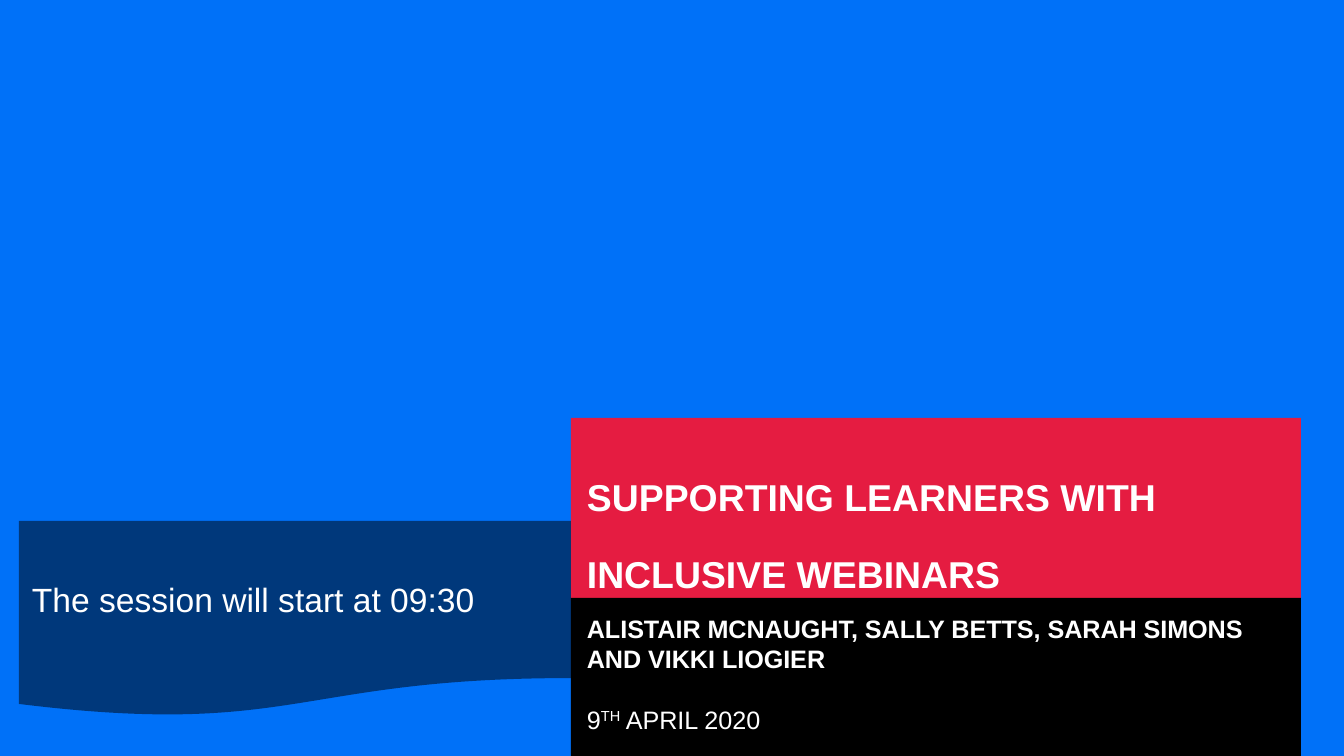
from lxml import etree
from pptx import Presentation
from pptx.dml.color import RGBColor
from pptx.enum.shapes import MSO_SHAPE
from pptx.enum.text import MSO_ANCHOR, PP_ALIGN
from pptx.oxml.ns import qn
from pptx.util import Inches, Pt

PX = Inches(10) / 1344
WHITE, BLUE, RED, BLACK = "FFFFFF", "0071F8", "E51C41", "000000"
PANEL_INSETS = (16, 16, 0, 16)  # left, top, right, bottom

# Each run is (text, baseline shift in percent)
BOXES = [
    dict(at=(571, 418, 730, 183), fill=RED, runs=[("SUPPORTING LEARNERS WITH INCLUSIVE WEBINARS", 0)],
         size=20, bold=True, spacing=41, anchor=MSO_ANCHOR.MIDDLE, insets=(16, 20, 0, 0)),
    dict(at=(571, 598, 730, 183), fill=BLACK,
         runs=[("ALISTAIR MCNAUGHT, SALLY BETTS, SARAH SIMONS AND VIKKI LIOGIER", 0)],
         size=13.5, bold=True, spacing=16, insets=PANEL_INSETS),
    dict(at=(571, 675, 707, 74), runs=[("9", 0), ("TH", 30), (" APRIL 2020", 0)],
         size=13.5, spacing=16, anchor=MSO_ANCHOR.BOTTOM, insets=PANEL_INSETS),
    dict(at=(19, 521, 552, 196), shape=MSO_SHAPE.FLOWCHART_DOCUMENT, fill=BLACK, alpha=50,
         runs=[("The session will start at 09:30", 0)], size=18, anchor=MSO_ANCHOR.MIDDLE),
]


def px(n):
    return round(n * PX)


def rgb(value):
    return RGBColor.from_string(value)


def paint(sp, color, alpha):
    sp.shadow.inherit = False
    sp.line.fill.background()
    sp.fill.solid()
    sp.fill.fore_color.rgb = rgb(color)
    if alpha < 100:
        clr = sp.fill._xPr.find(".//" + qn("a:srgbClr"))
        etree.SubElement(clr, qn("a:alpha"), val=str(alpha * 1000))


def add_box(slide, at, runs, size, fill=None, alpha=100, shape=MSO_SHAPE.RECTANGLE,
            bold=False, spacing=None, anchor=MSO_ANCHOR.TOP, insets=(13, 7, 13, 7)):
    at = [px(n) for n in at]
    if fill:
        sp = slide.shapes.add_shape(shape, *at)
        paint(sp, fill, alpha)
    else:
        sp = slide.shapes.add_textbox(*at)
    tf = sp.text_frame
    tf.word_wrap = True
    tf.vertical_anchor = anchor
    tf.margin_left, tf.margin_top, tf.margin_right, tf.margin_bottom = [px(n) for n in insets]
    p = tf.paragraphs[0]
    p.alignment = PP_ALIGN.LEFT
    if spacing:
        p.line_spacing = Pt(spacing)
    for text, baseline in runs:
        r = p.add_run()
        r.text = text
        r.font.name, r.font.size, r.font.bold = "Arial", Pt(size), bold
        r.font.color.rgb = rgb(WHITE)
        if baseline:
            r.font._element.set("baseline", str(baseline * 1000))


prs = Presentation()
prs.slide_width, prs.slide_height = px(1344), px(756)
s = prs.slides.add_slide(prs.slide_layouts[6])
s.background.fill.solid()
s.background.fill.fore_color.rgb = rgb(BLUE)
for box in BOXES:
    add_box(s, **box)
prs.save("out.pptx")
